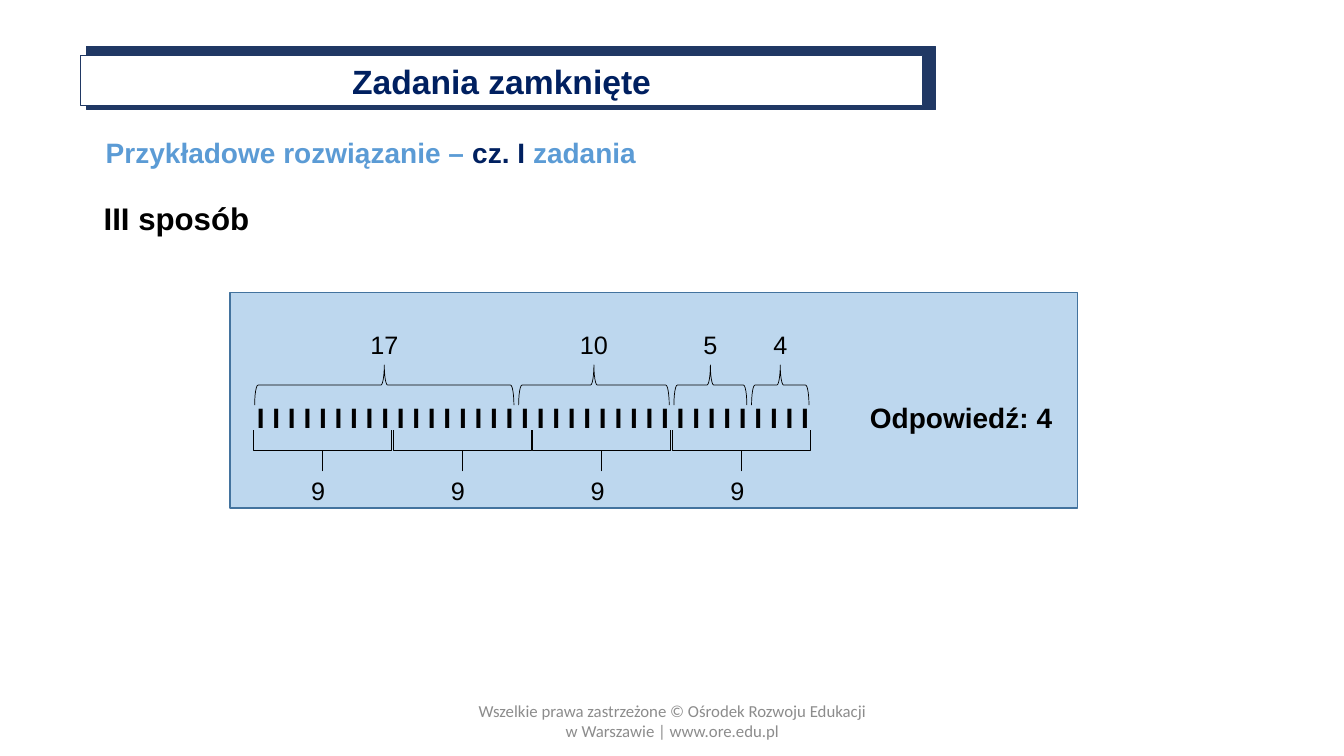
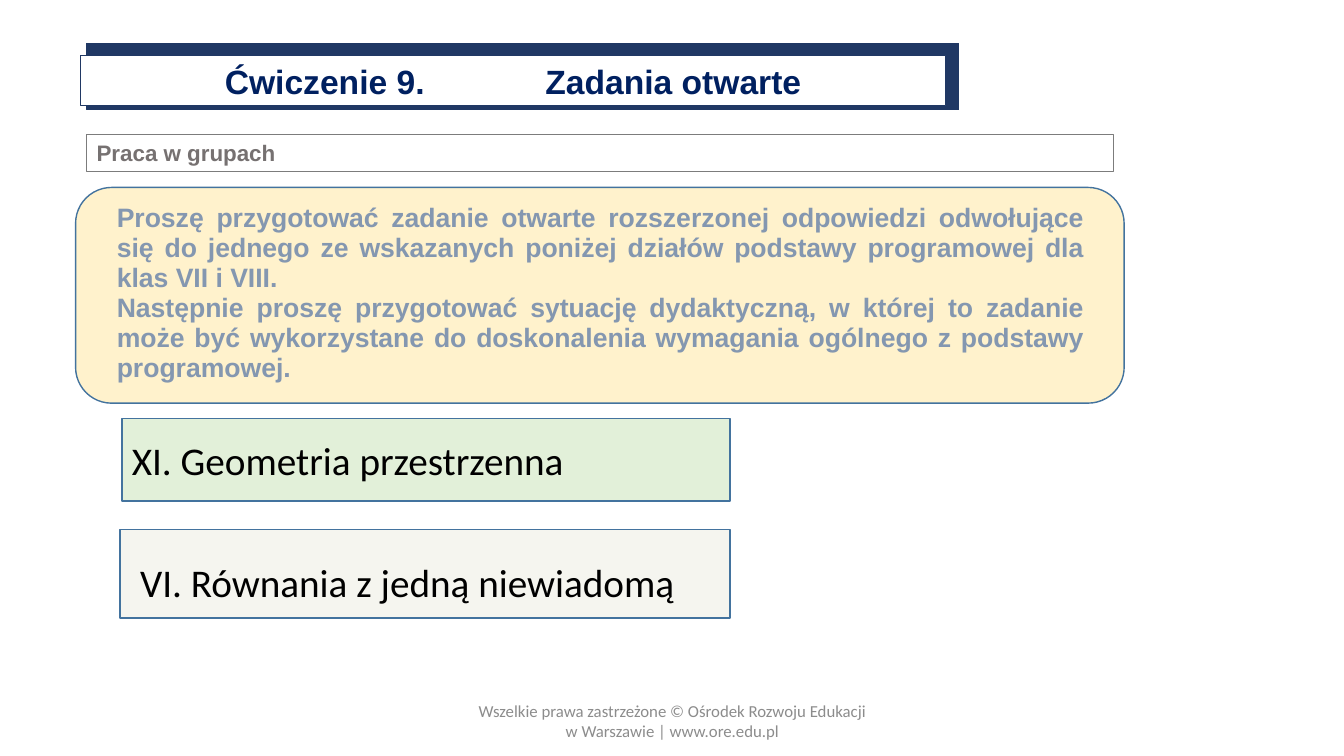
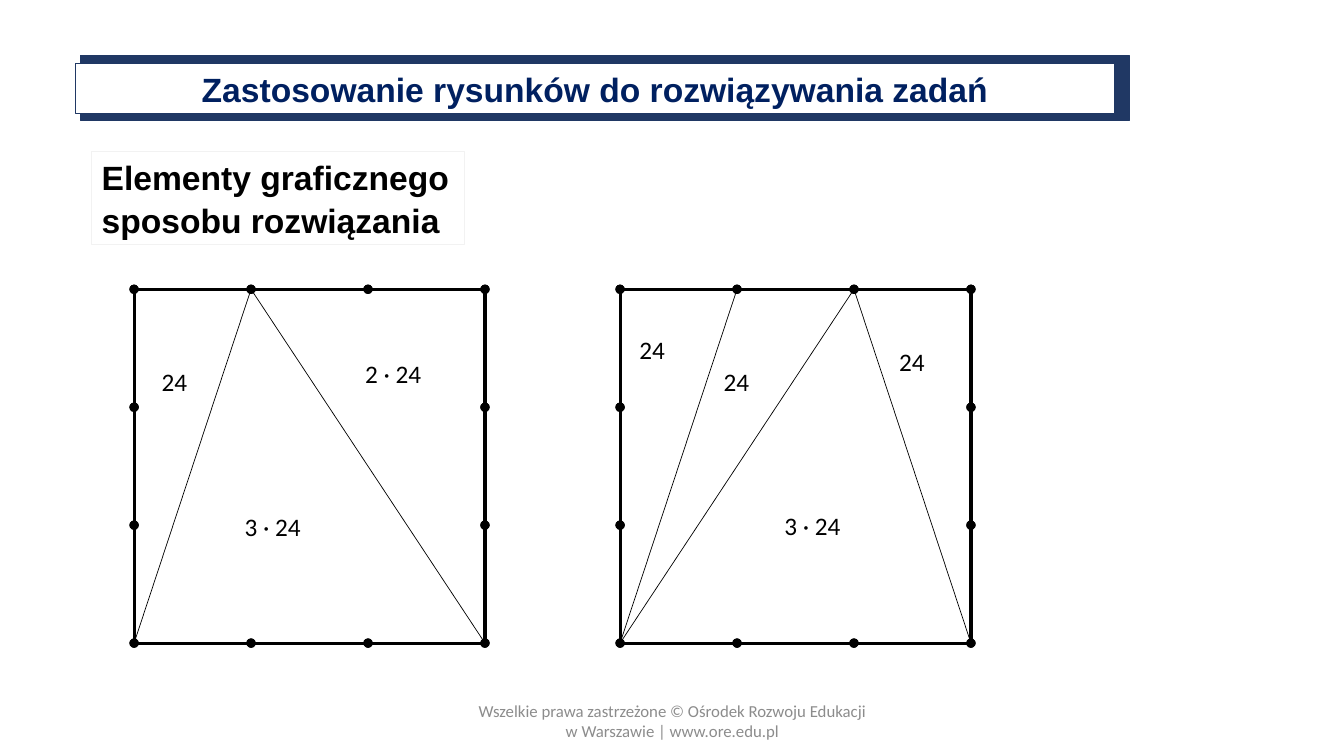
from dataclasses import dataclass
from itertools import pairwise
from typing import NamedTuple, Optional, Sequence, Union

from pptx import Presentation
from pptx.dml.color import RGBColor
from pptx.enum.shapes import MSO_CONNECTOR, MSO_SHAPE as Preset
from pptx.enum.text import MSO_ANCHOR as Anchor, PP_ALIGN as Align
from pptx.oxml.ns import qn
from pptx.shapes.autoshape import Shape
from pptx.slide import Slide
from pptx.util import Emu, Inches, Pt
from lxml.etree import SubElement

# Slide grid: square cells of a tenth of an inch
COLUMNS, ROWS = 133.3, 75
CELL = Inches(0.1)

NAVY = RGBColor(0x20, 0x38, 0x64)
TITLE_BLUE = RGBColor(0x00, 0x20, 0x60)
SKY = RGBColor(0x5B, 0x9B, 0xD5)
PALE_BLUE = RGBColor(0xBD, 0xD7, 0xEE)
EDGE_BLUE = RGBColor(0x43, 0x73, 0x9E)
SLATE = RGBColor(0x84, 0x97, 0xB0)
CREAM = RGBColor(0xFF, 0xF2, 0xCC)
PALE_GREEN = RGBColor(0xE2, 0xF0, 0xD9)
IVORY = RGBColor(0xF5, 0xF5, 0xEF)
FOOTER_GREY = RGBColor(0x8C, 0x8C, 0x8C)
LABEL_GREY = RGBColor(0x76, 0x71, 0x71)
FRAME_GREY = RGBColor(0x7C, 0x7C, 0x7C)
FAINT_GREY = RGBColor(0xF2, 0xF2, 0xF2)
BLACK = RGBColor(0, 0, 0)
WHITE = RGBColor(0xFF, 0xFF, 0xFF)

FOOTER = "Wszelkie prawa zastrzeżone © Ośrodek Rozwoju Edukacji\nw Warszawie | www.ore.edu.pl"


class Box(NamedTuple):
    """Left, top, width and height in grid cells."""
    left: float
    top: float
    width: float
    height: float


class Insets(NamedTuple):
    left: float = 1
    top: float = 0.5
    right: float = 1
    bottom: float = 0.5


class Run(NamedTuple):
    text: str
    color: RGBColor


class Point(NamedTuple):
    column: float
    row: float


class Label(NamedTuple):
    text: str
    at: Point


@dataclass(frozen=True)
class DividedSquare:
    """Square with sides cut in three; cuts and labels use its own lattice."""
    left: float
    cuts: Sequence[tuple[Point, Point]]
    labels: Sequence[Label]
    top: float = 28.7
    step_x: float = 11.6
    step_y: float = 11.7

    def place(self, point: Point) -> Point:
        return Point(self.left + point.column * self.step_x, self.top + point.row * self.step_y)


def cells(count: float) -> Emu:
    return Emu(round(count * CELL))


# Drawing helpers
def write(shape: Shape, content: Union[str, Sequence[Run]], *, size: float, font: str = "Arial",
          color: RGBColor = BLACK, bold: bool = False, align: Align = Align.LEFT,
          anchor: Anchor = Anchor.MIDDLE, spacing: Optional[float] = None,
          tab: Optional[float] = None, insets: Insets = Insets()) -> None:
    frame = shape.text_frame
    frame.word_wrap = True
    frame.vertical_anchor = anchor
    frame.margin_left, frame.margin_top, frame.margin_right, frame.margin_bottom = map(cells, insets)
    if isinstance(content, str):
        lines = [[Run(line, color)] for line in content.split("\n")]
    else:
        lines = [content]
    for index, line in enumerate(lines):
        paragraph = frame.add_paragraph() if index else frame.paragraphs[0]
        if tab is not None:
            stops = SubElement(paragraph._p.get_or_add_pPr(), qn("a:tabLst"))
            SubElement(stops, qn("a:tab"), pos=str(cells(tab)), algn="l")
        paragraph.alignment = align
        if spacing:
            paragraph.line_spacing = spacing
        for part in line:
            run = paragraph.add_run()
            run.text = part.text
            run.font.name, run.font.size, run.font.bold = font, Pt(size), bold
            run.font.color.rgb = part.color


def add_text(slide: Slide, box: Box, content: Union[str, Sequence[Run]], **style) -> None:
    write(slide.shapes.add_textbox(*map(cells, box)), content, **style)


def add_panel(slide: Slide, box: Box, fill: Optional[RGBColor], edge: RGBColor,
              weight: float = 0.75, preset: Preset = Preset.RECTANGLE) -> Shape:
    panel = slide.shapes.add_shape(preset, *map(cells, box))
    panel.shadow.inherit = False
    if fill is None:
        panel.fill.background()
    else:
        panel.fill.solid()
        panel.fill.fore_color.rgb = fill
    panel.line.color.rgb = edge
    panel.line.width = Pt(weight)
    return panel


def add_segment(slide: Slide, start: Point, end: Point, weight: float, dots: bool = False) -> None:
    segment = slide.shapes.add_connector(MSO_CONNECTOR.STRAIGHT, *map(cells, (*start, *end)))
    segment.line.color.rgb = BLACK
    segment.line.width = Pt(weight)
    if dots:
        for tip in ("a:headEnd", "a:tailEnd"):
            SubElement(segment.line._get_or_add_ln(), qn(tip), type="oval")
    SubElement(segment._element.spPr, qn("a:effectLst"))


def add_brace(slide: Slide, box: Box, upward: bool) -> None:
    """Draw a brace that fills the box; the preset lies on its side."""
    upright = Box(box.left + (box.width - box.height) / 2, box.top + (box.height - box.width) / 2,
                  box.height, box.width)
    brace = add_panel(slide, upright, None, BLACK, 0.5, Preset.RIGHT_BRACE)
    brace.rotation = 270 if upward else 90
    if not upward:
        brace.adjustments[0] = 0


def new_slide(deck: Presentation, title: str, bar: Box, plate: Box, **style) -> Slide:
    """Blank slide with the title band and the footer."""
    slide = deck.slides.add_slide(deck.slide_layouts[6])
    add_panel(slide, bar, NAVY, NAVY)
    style = {"align": Align.CENTER} | style
    write(add_panel(slide, plate, WHITE, NAVY), title, size=24, color=TITLE_BLUE, bold=True, **style)
    add_text(slide, Box(44.2, 69.5, 45, 4), FOOTER, size=12, font="Calibri",
             color=FOOTER_GREY, align=Align.CENTER)
    return slide


# Closed tasks: 36 ticks grouped by braces
TICKS, TICK_PITCH, FIRST_TICK = 36, 1.54, 25.8


def add_groups(slide: Slide, counts: Sequence[int], brace_top: float, label_top: float,
               slack: float, upward: bool, nudge: float = 0) -> None:
    first = 0
    for count in counts:
        left = FIRST_TICK + TICK_PITCH * (first - 0.5 + slack / 2)
        width = TICK_PITCH * (count - slack)
        add_brace(slide, Box(left, brace_top, width, 4), upward)
        add_text(slide, Box(left + width / 2 - 3 + nudge, label_top, 6, 4), str(count),
                 size=18, align=Align.CENTER)
        first += count


def closed_tasks(deck: Presentation) -> None:
    slide = new_slide(deck, "Zadania zamknięte", Box(8.6, 4.6, 84.2, 6.3), Box(8, 5.5, 83.5, 5))
    add_text(slide, Box(9.5, 12.9, 101.8, 4.4),
             [Run("Przykładowe rozwiązanie – ", SKY), Run("cz. I ", TITLE_BLUE), Run("zadania", SKY)],
             size=20, bold=True)
    add_text(slide, Box(9.3, 19.4, 22, 4.4), "III sposób", size=22.3, bold=True)
    add_panel(slide, Box(22.8, 29, 84.1, 21.4), PALE_BLUE, EDGE_BLUE, 1)
    add_text(slide, Box(24.5, 39.4, 82.7, 4), " ".join("I" * TICKS) + "\tOdpowiedź: 4",
             size=20, bold=True, tab=60.8)
    add_groups(slide, (17, 10, 5, 4), 36.2, 32.2, 0.3, upward=True)
    add_groups(slide, (9, 9, 9, 9), 42.7, 46.7, 0.12, upward=False, nudge=-0.4)


# Open tasks: group exercise with two topics
def open_tasks(deck: Presentation) -> None:
    slide = new_slide(deck, "Ćwiczenie 9.\tZadania otwarte", Box(8.6, 4.3, 86.5, 6.6),
                      Box(8, 5.5, 85.8, 5), align=Align.LEFT, tab=31.8, insets=Insets(left=14.3))
    write(add_panel(slide, Box(8.6, 13.3, 101.8, 3.7), None, FRAME_GREY), "Praca w grupach",
          size=16, color=LABEL_GREY, bold=True)
    add_panel(slide, Box(7.5, 18.6, 104, 21.4), CREAM, EDGE_BLUE, 1, Preset.ROUNDED_RECTANGLE)
    add_text(slide, Box(10.6, 19.5, 97.9, 19),
             "Proszę przygotować zadanie otwarte rozszerzonej odpowiedzi odwołujące się do jednego "
             "ze wskazanych poniżej działów podstawy programowej dla klas VII i VIII.\n"
             "Następnie proszę przygotować sytuację dydaktyczną, w której to zadanie może być "
             "wykorzystane do doskonalenia wymagania ogólnego z podstawy programowej.",
             size=19, color=SLATE, bold=True, align=Align.JUSTIFY, anchor=Anchor.BOTTOM, spacing=0.94)
    topics = (
        ("XI. Geometria przestrzenna", Box(12.1, 41.5, 60.3, 8.2), PALE_GREEN, Insets()),
        ("VI. Równania z jedną niewiadomą", Box(11.9, 52.5, 60.5, 8.8), IVORY, Insets(2, 1.6, 1, 0)),
    )
    for topic, box, fill, insets in topics:
        write(add_panel(slide, box, fill, EDGE_BLUE, 1), topic, size=28, font="Calibri", insets=insets)


# Drawings: two squares cut into triangles
SQUARES = (
    DividedSquare(13.3, ((Point(1, 0), Point(0, 3)), (Point(1, 0), Point(3, 3))),
                  (Label("24", Point(0.15, 0.61)), Label("2 · 24", Point(1.89, 0.54)),
                   Label("3 · 24", Point(0.86, 1.84)))),
    DividedSquare(61.5, ((Point(1, 0), Point(0, 3)), (Point(2, 0), Point(0, 3)),
                         (Point(2, 0), Point(3, 3))),
                  (Label("24", Point(0.08, 0.34)), Label("24", Point(0.8, 0.61)),
                   Label("24", Point(2.3, 0.44)), Label("3 · 24", Point(1.32, 1.83)))),
)


def add_square(slide: Slide, square: DividedSquare) -> None:
    for start, end in pairwise(range(4)):
        for edge in (0, 3):
            add_segment(slide, square.place(Point(start, edge)), square.place(Point(end, edge)), 2.25, True)
            add_segment(slide, square.place(Point(edge, start)), square.place(Point(edge, end)), 2.25, True)
    for start, end in square.cuts:
        add_segment(slide, square.place(start), square.place(end), 0.5)
    for label in square.labels:
        add_text(slide, Box(*square.place(label.at), 11.5, 4), label.text, size=18, font="Calibri")


def drawings(deck: Presentation) -> None:
    slide = new_slide(deck, "Zastosowanie rysunków do rozwiązywania zadań",
                      Box(8, 5.5, 104, 6.5), Box(7.5, 6.3, 103, 5))
    write(add_panel(slide, Box(9.1, 15, 37, 9.3), WHITE, FAINT_GREY),
          "Elementy graficznego sposobu rozwiązania", size=24, bold=True,
          anchor=Anchor.BOTTOM, spacing=1.06)
    for square in SQUARES:
        add_square(slide, square)


def main() -> None:
    deck = Presentation()
    deck.slide_width, deck.slide_height = cells(COLUMNS), cells(ROWS)
    for build in (closed_tasks, open_tasks, drawings):
        build(deck)
    deck.save("out.pptx")


if __name__ == "__main__":
    main()
